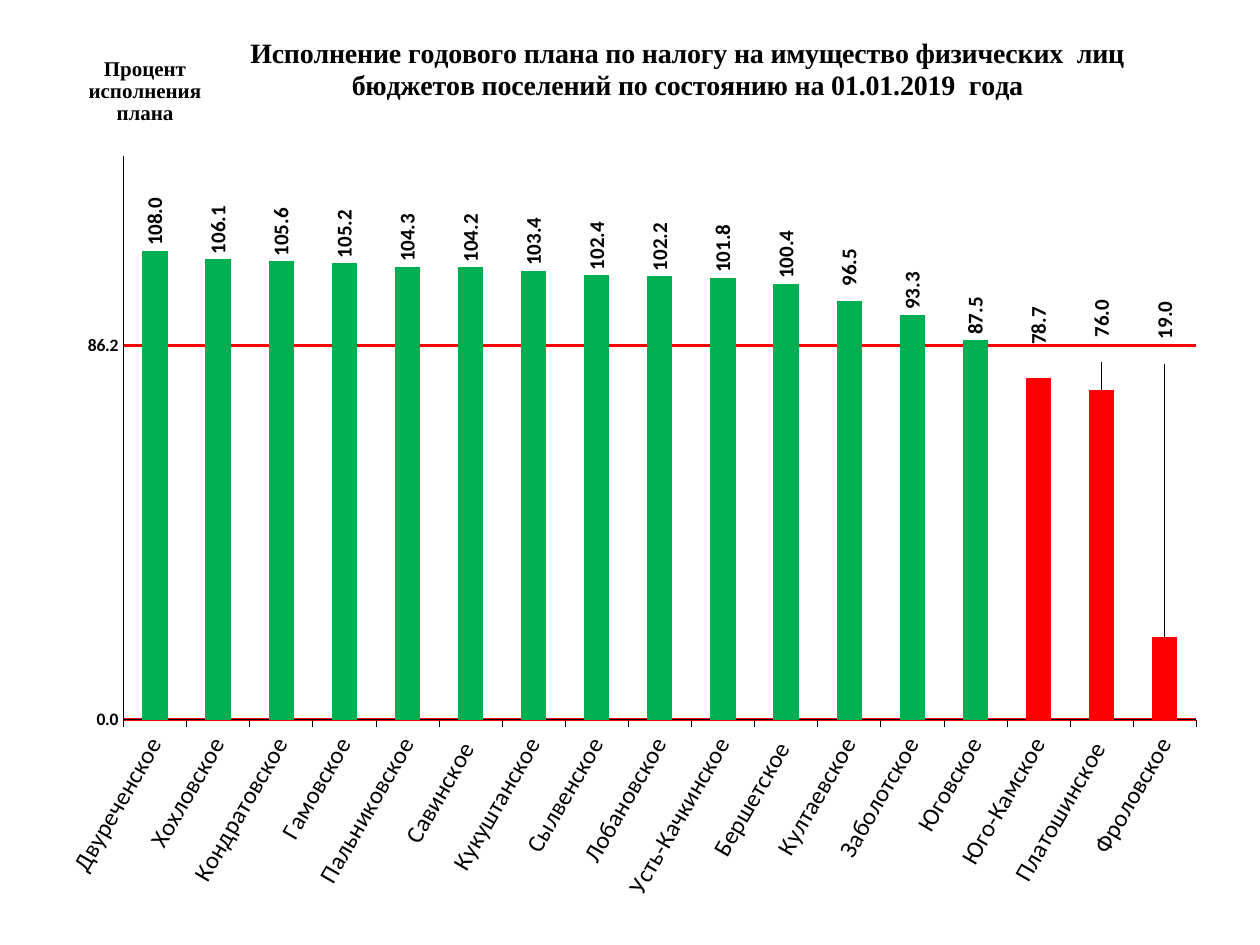
"""Build a slide charting property tax plan execution by settlement."""
from copy import deepcopy
from dataclasses import dataclass

from lxml.etree import SubElement
from pptx import Presentation
from pptx.chart.data import CategoryChartData
from pptx.dml.color import RGBColor
from pptx.enum.chart import (XL_CHART_TYPE, XL_LABEL_POSITION,
                             XL_TICK_LABEL_POSITION, XL_TICK_MARK)
from pptx.oxml import parse_xml
from pptx.oxml.ns import nsdecls, qn
from pptx.util import Inches, Pt


@dataclass(frozen=True)
class Theme:
    ink: RGBColor = RGBColor(0, 0, 0)
    met: RGBColor = RGBColor(0x00, 0xB0, 0x50)
    missed: RGBColor = RGBColor(0xFF, 0, 0)
    body_font: str = "Calibri"
    title_font: str = "Times New Roman"
    title_size: int = 16
    category_size: int = 14
    label_size: int = 12
    scale_size: int = 10


THEME = Theme()
TARGET = 86.2
TITLE = ["Исполнение годового плана по налогу на имущество физических  лиц",
         "бюджетов поселений по состоянию на 01.01.2019  года"]
AXIS_TITLE = ["Процент", "исполнения", "плана"]
RESULTS = {
    "Двуреченское": 108, "Хохловское": 106.1, "Кондратовское": 105.6,
    "Гамовское": 105.2, "Пальниковское": 104.3, "Савинское ": 104.2,
    "Кукуштанское": 103.4, "Сылвенское": 102.4, "Лобановское": 102.2,
    "Усть-Качкинское": 101.8, "Бершетское ": 100.4, "Култаевское": 96.5,
    "Заболотское": 93.3, "Юговское": 87.5, "Юго-Камское": 78.7,
    "Платошинское ": 76, "Фроловское": 19,
}
LABEL_LIFTS = {"Култаевское": -0.01, "Юго-Камское": -0.03,
               "Платошинское ": -0.05, "Фроловское": -0.31}


def style_font(font, size, bold=False, name=THEME.body_font):
    font.name, font.size, font.bold = name, Pt(size), bold
    font.color.rgb = THEME.ink


def write_text(text_frame, lines, **style):
    for index, line in enumerate(lines):
        paragraph = text_frame.paragraphs[0] if index == 0 else text_frame.add_paragraph()
        run = paragraph.add_run()
        run.text = line
        style_font(run.font, **style)


def rotate(element, degrees):
    body = next(element.iter(qn("a:bodyPr")))
    body.set("rot", str(degrees * 60000))
    body.set("vert", "horz")


def set_layout(element, index, **settings):
    for old in element.findall(qn("c:layout")):
        element.remove(old)
    layout = parse_xml(f"<c:layout {nsdecls('c')}><c:manualLayout/></c:layout>")
    for name, value in settings.items():
        SubElement(layout[0], qn(f"c:{name}")).set("val", str(value))
    element.insert(index, layout)


class SlideBuilder:
    def __init__(self, presentation, theme):
        self.theme = theme
        self.slide = presentation.slides.add_slide(presentation.slide_layouts[6])

    def add_column_chart(self, results, left, top, width, height):
        data = CategoryChartData(number_format="#,##0.0")
        data.categories = list(results)
        data.add_series("Series 1", list(results.values()))
        chart = self.slide.shapes.add_chart(
            XL_CHART_TYPE.COLUMN_CLUSTERED, left, top, width, height, data).chart
        chart.has_legend = False
        style_font(chart.font, self.theme.scale_size)
        set_layout(chart.plots[0]._element.getparent(), 0, layoutTarget="inner",
                   xMode="edge", yMode="edge", x=0.091, y=0.17, w=0.862, h=0.597)
        return chart

    def add_title(self, title, lines, size, x, y):
        write_text(title.text_frame, lines, size=size, bold=True, name=self.theme.title_font)
        rotate(title._element, 0)
        set_layout(title._element, 1, xMode="edge", yMode="edge", x=x, y=y)

    def style_axis(self, axis, size, tick_mark, bold=False):
        style_font(axis.tick_labels.font, size, bold)
        axis.major_tick_mark = tick_mark
        axis.minor_tick_mark = XL_TICK_MARK.NONE
        axis.format.line.color.rgb = self.theme.ink
        axis.format.line.width = Pt(0.25)

    def style_axes(self, chart, target):
        categories, values = chart.category_axis, chart.value_axis
        self.style_axis(categories, self.theme.category_size, XL_TICK_MARK.OUTSIDE)
        categories.tick_label_position = XL_TICK_LABEL_POSITION.LOW
        rotate(categories._element.find(qn("c:txPr")), -60)
        self.style_axis(values, self.theme.scale_size, XL_TICK_MARK.NONE, bold=True)
        values.minimum_scale, values.maximum_scale = 0, 130
        values.major_unit = target
        values.tick_labels.number_format = "0.0"
        values.tick_labels.number_format_is_linked = False
        values.has_major_gridlines = True
        values.major_gridlines.format.line.color.rgb = self.theme.missed
        values.major_gridlines.format.line.width = Pt(2)

    def color_columns(self, chart, results, target):
        plot = chart.plots[0]
        plot.gap_width, plot.vary_by_categories = 150, False
        series = plot.series[0]
        series.format.fill.solid()
        series.format.fill.fore_color.rgb = self.theme.met
        for index, value in enumerate(results.values()):
            if value < target:
                fill = series.points[index].format.fill
                fill.solid()
                fill.fore_color.rgb = self.theme.missed

    def add_labels(self, chart, results, lifts):
        labels = chart.plots[0].series[0].data_labels
        labels.show_value = True
        labels.number_format = "#,##0.0"
        labels.number_format_is_linked = False
        labels.position = XL_LABEL_POSITION.OUTSIDE_END
        style_font(labels.font, self.theme.label_size, bold=True)
        rotate(labels._element, -90)
        shared = [child for child in labels._element
                  if child.tag != qn("c:showLeaderLines")]
        names = list(results)
        for position, (name, lift) in enumerate(lifts.items()):
            label = parse_xml(f'<c:dLbl {nsdecls("c")}><c:idx val="{names.index(name)}"/></c:dLbl>')
            label.extend(deepcopy(shared))
            set_layout(label, 1, x=0, y=lift)
            labels._element.insert(position, label)


def main():
    presentation = Presentation()
    presentation.slide_width, presentation.slide_height = Inches(10), Inches(7.5)
    builder = SlideBuilder(presentation, THEME)
    chart = builder.add_column_chart(
        RESULTS, Inches(0.08), Inches(-0.04), Inches(9.88), Inches(7.5))
    builder.add_title(chart.chart_title, TITLE, THEME.title_size, x=0.19, y=0.04)
    builder.style_axes(chart, TARGET)
    builder.add_title(chart.value_axis.axis_title, AXIS_TITLE, THEME.label_size, x=0.06, y=0.06)
    builder.color_columns(chart, RESULTS, TARGET)
    builder.add_labels(chart, RESULTS, LABEL_LIFTS)
    presentation.save("out.pptx")


if __name__ == "__main__":
    main()
